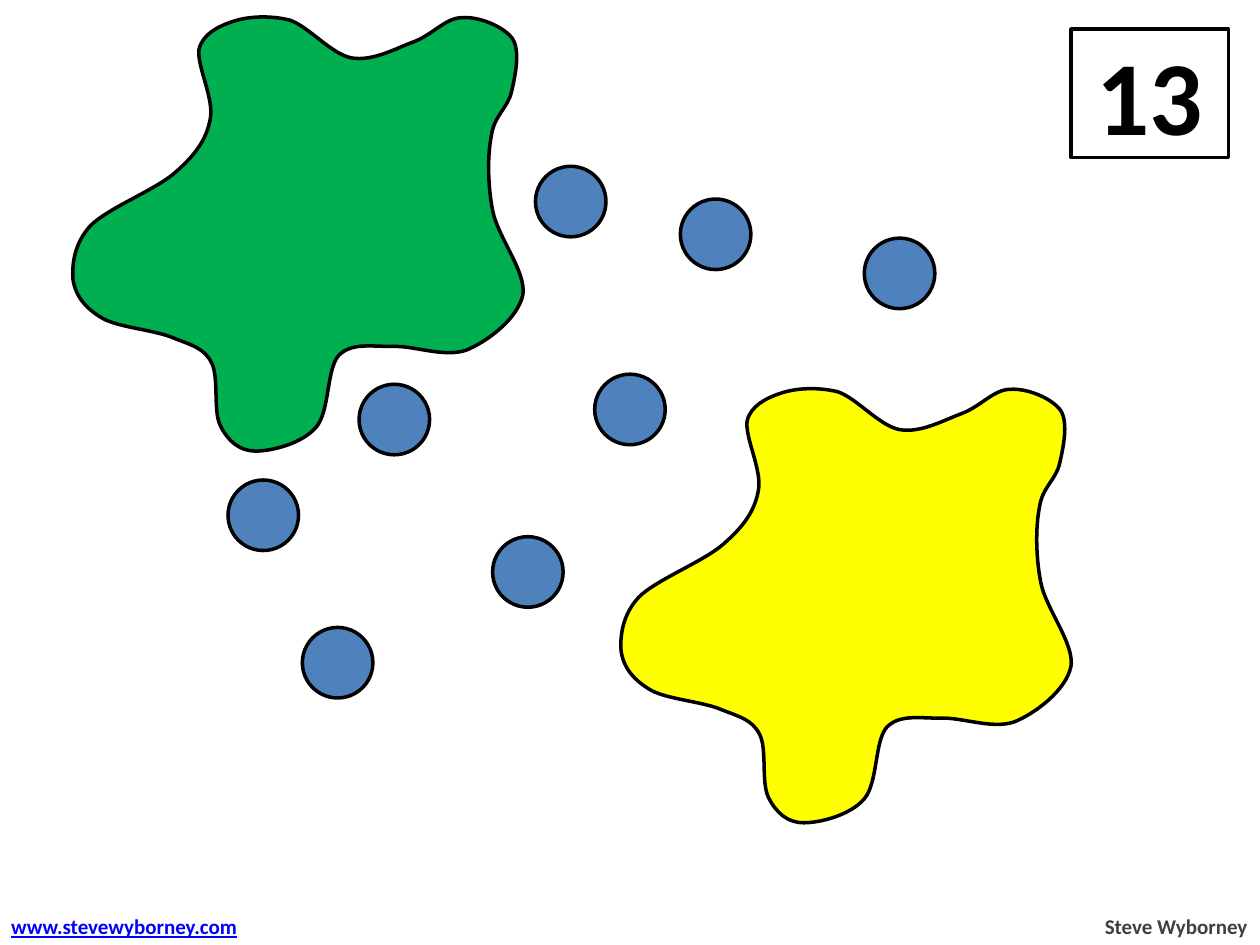
from lxml.etree import SubElement
from pptx import Presentation
from pptx.dml.color import RGBColor
from pptx.enum.shapes import MSO_SHAPE
from pptx.enum.text import MSO_ANCHOR, MSO_AUTO_SIZE, PP_ALIGN
from pptx.oxml.ns import qn
from pptx.util import Inches, Pt

BLACK = RGBColor(0x00, 0x00, 0x00)
WHITE = RGBColor(0xFF, 0xFF, 0xFF)
GRAY = RGBColor(0x40, 0x40, 0x40)
LINK_BLUE = RGBColor(0x00, 0x00, 0xFF)
DOT_BLUE = RGBColor(0x4F, 0x81, 0xBD)
GREEN = RGBColor(0x00, 0xB0, 0x50)
YELLOW = RGBColor(0xFF, 0xFF, 0x00)

DOT_SIZE = 0.56
DOTS = [
    (2.85, 3.05), (4.72, 2.97), (5.4, 1.58), (6.86, 1.89),
    (1.81, 3.81), (2.4, 4.98), (3.91, 4.26), (4.25, 1.32),
]

# Blob outline in hundredths of an inch: two control points and an end point per curve
BLOB_START = (82, 253)
BLOB_CURVES = [
    ((68, 245), (60, 235), (58, 222)),
    ((57, 210), (59, 193), (72, 179)),
    ((86, 165), (123, 151), (139, 137)),
    ((155, 123), (164, 111), (167, 94)),
    ((170, 78), (156, 52), (158, 39)),
    ((161, 27), (173, 21), (185, 17)),
    ((197, 13), (214, 12), (230, 16)),
    ((245, 21), (263, 43), (279, 46)),
    ((296, 49), (315, 38), (329, 33)),
    ((344, 27), (354, 14), (367, 14)),
    ((380, 13), (400, 21), (407, 31)),
    ((413, 41), (409, 60), (406, 73)),
    ((403, 86), (392, 92), (390, 108)),
    ((387, 123), (387, 146), (391, 167)),
    ((395, 188), (418, 216), (415, 234)),
    ((411, 253), (387, 271), (370, 278)),
    ((352, 284), (328, 274), (311, 275)),
    ((294, 275), (279, 272), (269, 282)),
    ((259, 293), (262, 326), (251, 339)),
    ((240, 352), (216, 358), (203, 358)),
    ((190, 358), (181, 350), (175, 338)),
    ((169, 326), (174, 300), (168, 288)),
    ((162, 276), (152, 274), (137, 268)),
    ((123, 262), (95, 260), BLOB_START),
]
BLOBS = [(0, 0, GREEN), (4.35, 2.95, YELLOW)]


def style(shape, color):
    shape.shadow.inherit = False
    shape.fill.solid()
    shape.fill.fore_color.rgb = color
    shape.line.color.rgb = BLACK
    shape.line.width = Pt(2)


def set_font(paragraph, size, color):
    font = paragraph.font
    font.name = "Calibri"
    font.size = Pt(size)
    font.bold = True
    font.color.rgb = color


presentation = Presentation()
presentation.slide_width = Inches(10)
presentation.slide_height = Inches(7.5)
slide = presentation.slides.add_slide(presentation.slide_layouts[6])
shapes = slide.shapes

# Number box
number_box = shapes.add_shape(MSO_SHAPE.RECTANGLE, Inches(8.5), Inches(0.23), Inches(1.25), Inches(1.02))
style(number_box, WHITE)
number_box.text_frame.vertical_anchor = MSO_ANCHOR.MIDDLE
paragraph = number_box.text_frame.paragraphs[0]
paragraph.text = "13"
paragraph.alignment = PP_ALIGN.CENTER
set_font(paragraph, 60, BLACK)

# Footer texts
for text, left, width, alignment, color, underline in [
    ("Steve Wyborney", 8.66, 1.34, PP_ALIGN.RIGHT, GRAY, False),
    ("www.stevewyborney.com", -0.01, 2.05, PP_ALIGN.LEFT, LINK_BLUE, True),
]:
    footer = shapes.add_textbox(Inches(left), Inches(7.2), Inches(width), Inches(0.3))
    footer.text_frame.word_wrap = False
    footer.text_frame.auto_size = MSO_AUTO_SIZE.SHAPE_TO_FIT_TEXT
    paragraph = footer.text_frame.paragraphs[0]
    paragraph.text = text
    paragraph.alignment = alignment
    set_font(paragraph, 12, color)
    paragraph.font.underline = underline

# Dots
for left, top in DOTS:
    dot = shapes.add_shape(MSO_SHAPE.OVAL, Inches(left), Inches(top), Inches(DOT_SIZE), Inches(DOT_SIZE))
    style(dot, DOT_BLUE)

# Blobs: build through the end points, then turn each segment into a curve
end_points = [curve[-1] for curve in BLOB_CURVES]
min_x = min(x for x, y in end_points)
min_y = min(y for x, y in end_points)
for left, top, color in BLOBS:
    builder = shapes.build_freeform(*BLOB_START, scale=Inches(0.01))
    builder.add_line_segments(end_points, close=True)
    blob = builder.convert_to_shape(Inches(left), Inches(top))
    style(blob, color)
    segments = list(blob.element.iter(qn("a:lnTo")))
    for segment, curve in zip(segments, BLOB_CURVES):
        bezier = segment.getparent().makeelement(qn("a:cubicBezTo"))
        for x, y in curve:
            SubElement(bezier, qn("a:pt"), x=str(x - min_x), y=str(y - min_y))
        segment.getparent().replace(segment, bezier)

presentation.save("out.pptx")
